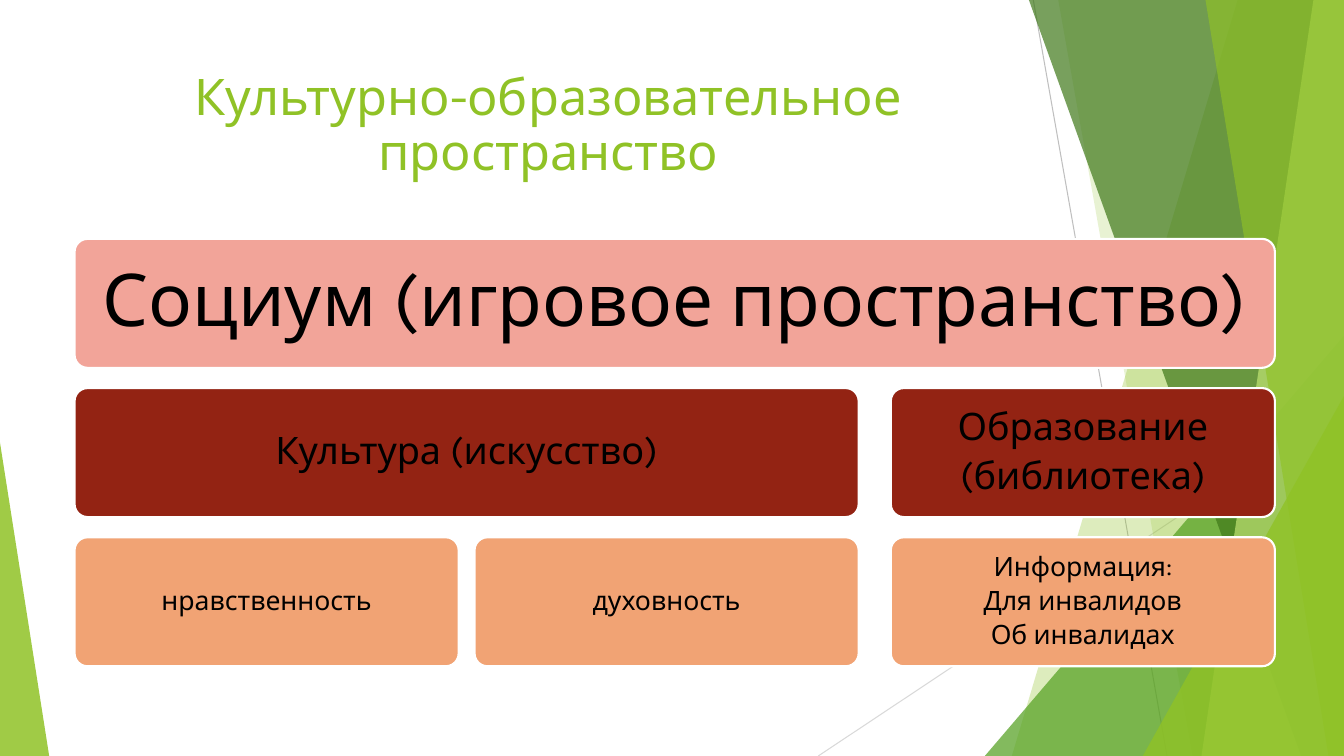
from dataclasses import dataclass

from lxml import etree
from pptx import Presentation
from pptx import util as u
from pptx.dml.color import RGBColor
from pptx.enum import shapes, text
from pptx.oxml import ns

FONT = "Karla"
WHITE = RGBColor(0xFF, 0xFF, 0xFF)
BLACK = RGBColor(0x00, 0x00, 0x00)
GREY = RGBColor(0xBF, 0xBF, 0xBF)
LIGHT_GREY = RGBColor(0xD9, 0xD9, 0xD9)
LIME = RGBColor(0x90, 0xC2, 0x26)
PALE_LIME = RGBColor(0xC0, 0xE4, 0x74)
GREEN = RGBColor(0x54, 0xA0, 0x21)
DARK_GREEN = RGBColor(0x3F, 0x78, 0x19)
PINK = RGBColor(0xF2, 0xA4, 0x99)
BRICK = RGBColor(0x93, 0x23, 0x13)
PEACH = RGBColor(0xF1, 0xA3, 0x74)

SLIDE_WIDTH, SLIDE_HEIGHT = 33.87, 19.05
COLUMN_LEFTS = (1.88, 11.96, 22.45)
COLUMN_WIDTH = 9.68
FIRST_ROW_TOP, ROW_PITCH, ROW_HEIGHT = 6.02, 3.76, 3.25


@dataclass(frozen=True)
class Ray:
    start: tuple[float, float]
    end: tuple[float, float]
    color: RGBColor


@dataclass(frozen=True)
class Facet:
    top_x: float
    bottom_x: float
    color: RGBColor
    opacity: int


@dataclass(frozen=True)
class Wedge:
    left: float
    right: float
    top: float
    apex: float
    color: RGBColor
    opacity: int


@dataclass(frozen=True)
class Level:
    color: RGBColor
    size: int
    inset: float


@dataclass(frozen=True)
class Tile:
    row: int
    first_column: int
    last_column: int
    lines: tuple[str, ...]


RAYS = (
    Ray((26.04, 0), (29.41, SLIDE_HEIGHT), GREY),
    Ray((SLIDE_WIDTH, 10.24), (20.62, SLIDE_HEIGHT), LIGHT_GREY),
)
DECORATIONS = (
    Facet(31.19, 25.5, LIME, 30),
    Facet(26.67, 30.05, LIME, 20),
    Wedge(24.82, SLIDE_WIDTH, 8.46, 1, GREEN, 72),
    Facet(25.93, 32.79, DARK_GREEN, 70),
    Facet(33.1, 30.28, PALE_LIME, 70),
    Facet(30.38, 33.48, LIME, 65),
    Wedge(28.8, SLIDE_WIDTH, 9.98, 1, LIME, 80),
    Wedge(0, 1.24, 11.15, 0, LIME, 85),
)
LEVELS = (Level(PINK, 52, 0.55), Level(BRICK, 27, 0.28), Level(PEACH, 19, 0.2))
TILES = (
    Tile(0, 0, 2, ("Социум (игровое пространство)",)),
    Tile(1, 0, 1, ("Культура (искусство)",)),
    Tile(2, 0, 0, ("нравственность",)),
    Tile(2, 1, 1, ("духовность",)),
    Tile(1, 2, 2, ("Образование", "(библиотека)")),
    Tile(2, 2, 2, ("Информация:", "Для инвалидов", "Об инвалидах")),
)


def draw_ray(slide, ray: Ray) -> None:
    connector = slide.shapes.add_connector(
        shapes.MSO_CONNECTOR.STRAIGHT,
        *(u.Cm(value) for value in ray.start + ray.end),
    )
    connector.line.color.rgb = ray.color
    connector.line.width = u.Pt(0.75)
    etree.SubElement(connector._element.spPr, ns.qn("a:effectLst"))


def paint(shape, color: RGBColor, opacity: int) -> None:
    shape.shadow.inherit = False
    shape.line.fill.background()
    shape.fill.solid()
    shape.fill.fore_color.rgb = color
    color_element = shape._element.spPr.find(".//" + ns.qn("a:srgbClr"))
    etree.SubElement(color_element, ns.qn("a:alpha"), val=str(opacity * 1000))


def draw_facet(slide, facet: Facet) -> None:
    builder = slide.shapes.build_freeform(u.Cm(facet.top_x), 0)
    corners = (
        (SLIDE_WIDTH, 0),
        (SLIDE_WIDTH, SLIDE_HEIGHT),
        (facet.bottom_x, SLIDE_HEIGHT),
    )
    builder.add_line_segments([(u.Cm(x), u.Cm(y)) for x, y in corners], close=True)
    paint(builder.convert_to_shape(), facet.color, facet.opacity)


def draw_wedge(slide, wedge: Wedge) -> None:
    shape = slide.shapes.add_shape(
        shapes.MSO_SHAPE.ISOSCELES_TRIANGLE,
        u.Cm(wedge.left),
        u.Cm(wedge.top),
        u.Cm(wedge.right - wedge.left),
        u.Cm(SLIDE_HEIGHT - wedge.top),
    )
    shape.adjustments[0] = wedge.apex
    paint(shape, wedge.color, wedge.opacity)


def write_line(paragraph, line: str, size: int, color: RGBColor) -> None:
    paragraph.alignment = text.PP_ALIGN.CENTER
    paragraph.line_spacing = 0.9
    run = paragraph.add_run()
    run.text = line
    run.font.name = FONT
    run.font.size = u.Pt(size)
    run.font.color.rgb = color


def draw_title(slide, title: str) -> None:
    box = slide.shapes.add_textbox(u.Cm(1.88), u.Cm(1.7), u.Cm(23.88), u.Cm(3.66))
    box.text_frame.word_wrap = True
    write_line(box.text_frame.paragraphs[0], title, 36, LIME)


def draw_tile(slide, tile: Tile) -> None:
    level = LEVELS[tile.row]
    left = COLUMN_LEFTS[tile.first_column]
    right = COLUMN_LEFTS[tile.last_column] + COLUMN_WIDTH
    shape = slide.shapes.add_shape(
        shapes.MSO_SHAPE.ROUNDED_RECTANGLE,
        u.Cm(left),
        u.Cm(FIRST_ROW_TOP + tile.row * ROW_PITCH),
        u.Cm(right - left),
        u.Cm(ROW_HEIGHT),
    )
    shape.adjustments[0] = 0.1
    shape.shadow.inherit = False
    shape.fill.solid()
    shape.fill.fore_color.rgb = level.color
    shape.line.color.rgb = WHITE
    shape.line.width = u.Pt(1.5)
    frame = shape.text_frame
    frame.word_wrap = True
    frame.vertical_anchor = text.MSO_ANCHOR.MIDDLE
    frame.margin_left = frame.margin_right = u.Cm(level.inset)
    frame.margin_top = frame.margin_bottom = u.Cm(level.inset)
    for index, line in enumerate(tile.lines):
        paragraph = frame.add_paragraph() if index else frame.paragraphs[0]
        paragraph.space_after = u.Pt(round(level.size * 0.21))
        write_line(paragraph, line, level.size, BLACK)


def main() -> None:
    presentation = Presentation()
    presentation.slide_width = u.Cm(SLIDE_WIDTH)
    presentation.slide_height = u.Cm(SLIDE_HEIGHT)
    slide = presentation.slides.add_slide(presentation.slide_layouts[6])
    for ray in RAYS:
        draw_ray(slide, ray)
    for decoration in DECORATIONS:
        if isinstance(decoration, Facet):
            draw_facet(slide, decoration)
        else:
            draw_wedge(slide, decoration)
    draw_title(slide, "Культурно-образовательное пространство")
    for tile in TILES:
        draw_tile(slide, tile)
    presentation.save("out.pptx")


if __name__ == "__main__":
    main()
